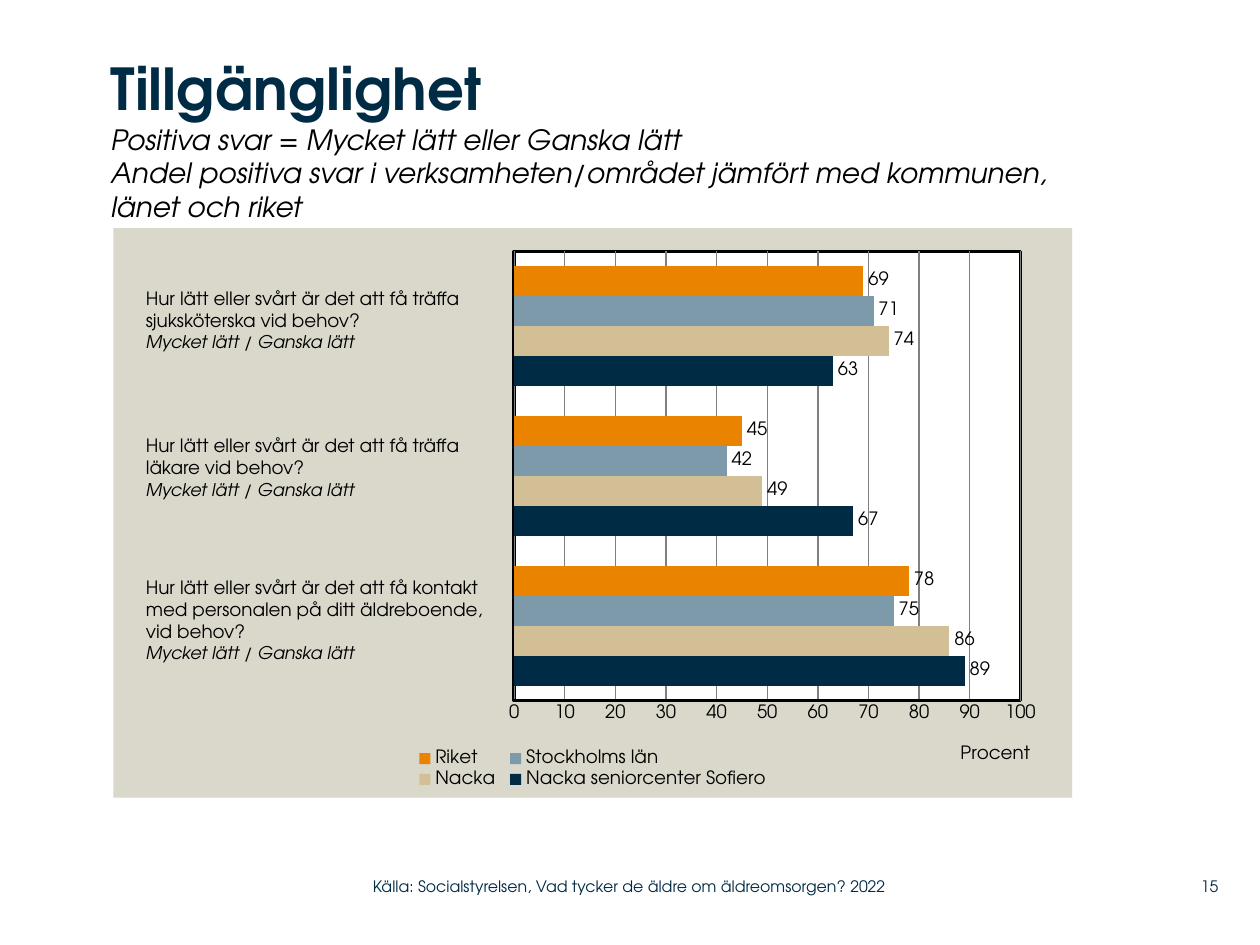
import pptx
import pptx.util
import pptx.chart.data
import pptx.dml.color
import pptx.enum.chart
import pptx.enum.text
import pptx.oxml
import pptx.oxml.ns

Inches, Pt = pptx.util.Inches, pptx.util.Pt
ANCHOR, ALIGN = pptx.enum.text.MSO_ANCHOR, pptx.enum.text.PP_ALIGN

# Content
HEADING = "Tillgänglighet"
SUBHEADING = [
    "Positiva svar = Mycket lätt eller Ganska lätt",
    "Andel positiva svar i verksamheten/området jämfört med kommunen, länet och riket",
]
ANSWER = "Mycket lätt / Ganska lätt"
QUESTIONS = [  # top, width, height, lines
    (2.23, 2.99, 0.81, ["Hur lätt eller svårt är det att få träffa sjuksköterska vid behov?"]),
    (3.4, 2.93, 0.81, ["Hur lätt eller svårt är det att få träffa", "läkare vid behov?"]),
    (4.52, 3.01, 0.98, ["Hur lätt eller svårt är det att få kontakt",
                        "med personalen på ditt äldreboende,", "vid behov?"]),
]
CATEGORIES = ["1", "2", "3"]
SERIES = [  # name, values, colour
    ("Nacka seniorcenter Sofiero", (89, 67, 63), "navy"),
    ("Nacka", (86, 49, 74), "sand"),
    ("Stockholms län", (75, 42, 71), "steel"),
    ("Riket", (78, 45, 69), "orange"),
]
AXIS_TITLE = "Procent"
FOOTERS = [  # left, width, text, alignment
    (2.96, 4.43, "Källa: Socialstyrelsen, Vad tycker de äldre om äldreomsorgen? 2022", ALIGN.LEFT),
    (9.2, 0.47, "15", ALIGN.RIGHT),
]

THEME = {
    "font": "TeX Gyre Adventor",
    "colors": {"navy": "002B45", "sand": "D3BF96", "steel": "7D9AAA", "orange": "E98300",
               "black": "000000", "white": "FFFFFF", "panel": "DAD7CB", "grid": "808080"},
    "sizes": {"heading": 33, "subheading": 16, "chart": 10.5, "answer": 10, "footer": 9},
}


def rgb(color):
    return pptx.dml.color.RGBColor.from_string(THEME["colors"][color])


def style(font, size, color="black", bold=False, italic=False):
    formats = {"name": THEME["font"], "size": Pt(THEME["sizes"][size]),
               "bold": bold, "italic": italic}
    for key, value in formats.items():
        setattr(font, key, value)
    font.color.rgb = rgb(color)


def add_run(paragraph, text, *args, **kwargs):
    run = paragraph.add_run()
    run.text = text
    style(run.font, *args, **kwargs)


def set_frame(frame, margin=None, anchor=ANCHOR.TOP):
    frame.word_wrap = True
    frame.vertical_anchor = anchor
    if margin is not None:
        for side in ("left", "right", "top", "bottom"):
            setattr(frame, f"margin_{side}", Inches(margin))


def paint(element, fill):
    """Give a chart part (chart space or plot area) a solid fill and return its properties."""
    properties = pptx.oxml.parse_xml(
        f'<c:spPr {pptx.oxml.ns.nsdecls("c", "a")}><a:solidFill><a:srgbClr val="{THEME["colors"][fill]}"/>'
        '</a:solidFill><a:ln><a:noFill/></a:ln></c:spPr>')
    return properties


def layout_xml(x, y, w=None, h=None, inner=False):
    target = '<c:layoutTarget val="inner"/>' if inner else ""
    size = f'<c:w val="{w}"/><c:h val="{h}"/>' if w else ""
    return pptx.oxml.parse_xml(
        f'<c:layout {pptx.oxml.ns.nsdecls("c")}><c:manualLayout>{target}<c:xMode val="edge"/>'
        f'<c:yMode val="edge"/><c:x val="{x}"/><c:y val="{y}"/>{size}</c:manualLayout></c:layout>')


def set_layout(element, after, *args, **kwargs):
    """Place a chart part by hand; the layout follows the named child, or comes first."""
    for old in element.findall(pptx.oxml.ns.qn("c:layout")):
        element.remove(old)
    layout = layout_xml(*args, **kwargs)
    if after:
        element.find(pptx.oxml.ns.qn(after)).addnext(layout)
    else:
        element.insert(0, layout)


def add_heading(slide):
    title = slide.shapes.title
    title.left, title.top, title.width, title.height = map(Inches, (0.88, 0.42, 7.77, 1.39))
    set_frame(title.text_frame, margin=0)
    title.text_frame.auto_size = pptx.enum.text.MSO_AUTO_SIZE.NONE
    paragraph = title.text_frame.paragraphs[0]
    paragraph.alignment = ALIGN.LEFT
    add_run(paragraph, HEADING, "heading", "navy", bold=True)
    for line in SUBHEADING:
        paragraph.add_line_break()
        add_run(paragraph, line, "subheading", italic=True)


def add_results(slide):
    data = pptx.chart.data.CategoryChartData()
    data.categories = CATEGORIES
    for name, values, _ in SERIES:
        data.add_series(name, values)
    chart = slide.shapes.add_chart(
        pptx.enum.chart.XL_CHART_TYPE.BAR_CLUSTERED,
        *map(Inches, (0.9, 1.81, 7.61, 4.52)), data).chart
    style(chart.font, "chart")
    chart.has_title = False

    # Bars and value labels
    plot = chart.plots[0]
    plot.gap_width, plot.overlap, plot.vary_by_categories = 100, 0, False
    for series, (_, _, color) in zip(plot.series, SERIES):
        series.format.fill.solid()
        series.format.fill.fore_color.rgb = rgb(color)
        labels = series.data_labels
        labels.show_value = True
        labels.position = pptx.enum.chart.XL_LABEL_POSITION.OUTSIDE_END
        style(labels.font, "chart")

    # Axes
    chart.category_axis.visible = False
    axis = chart.value_axis
    formats = {"minimum_scale": 0, "maximum_scale": 100, "major_unit": 10,
               "has_major_gridlines": True,
               "major_tick_mark": pptx.enum.chart.XL_TICK_MARK.NONE}
    for key, value in formats.items():
        setattr(axis, key, value)
    for line, color, width in ((axis.format.line, "black", 2),
                               (axis.major_gridlines.format.line, "grid", 0.75)):
        line.color.rgb = rgb(color)
        line.width = Pt(width)
    axis.axis_title.text_frame.text = AXIS_TITLE
    style(axis.axis_title.text_frame.paragraphs[0].runs[0].font, "chart")
    set_layout(axis.axis_title._element, "c:tx", 0.88, 0.9)

    # Legend
    chart.has_legend = True
    chart.legend.position = pptx.enum.chart.XL_LEGEND_POSITION.BOTTOM
    chart.legend.include_in_layout = False
    style(chart.legend.font, "chart")
    set_layout(chart.legend._element, "c:legendPos", 0.31, 0.91, 0.38, 0.08)

    # Plot area with a black frame, on a grey panel
    space = chart._chartSpace
    area = space.chart.plotArea
    set_layout(area, None, 0.418, 0.041, 0.528, 0.789, inner=True)
    frame = paint(area, "white")
    frame.replace(frame[1], pptx.oxml.parse_xml(
        f'<a:ln {pptx.oxml.ns.nsdecls("a")} w="{Pt(2)}"><a:solidFill>'
        f'<a:srgbClr val="{THEME["colors"]["black"]}"/></a:solidFill></a:ln>'))
    area.append(frame)
    space.chart.addnext(paint(space, "panel"))


def add_questions(slide):
    for top, width, height, lines in QUESTIONS:
        frame = slide.shapes.add_textbox(*map(Inches, (1.06, top, width, height))).text_frame
        set_frame(frame)
        for i, line in enumerate(lines):
            paragraph = frame.add_paragraph() if i else frame.paragraphs[0]
            add_run(paragraph, line, "chart")
        add_run(frame.add_paragraph(), ANSWER, "answer", italic=True)


def add_footers(slide):
    for left, width, text, alignment in FOOTERS:
        frame = slide.shapes.add_textbox(*map(Inches, (left, 6.89, width, 0.29))).text_frame
        set_frame(frame, margin=0, anchor=ANCHOR.MIDDLE)
        frame.paragraphs[0].alignment = alignment
        add_run(frame.paragraphs[0], text, "footer", "navy")


def main():
    deck = pptx.Presentation()
    deck.slide_width, deck.slide_height = Inches(10), Inches(7.5)
    slide = deck.slides.add_slide(deck.slide_layouts[5])
    for add_part in (add_heading, add_results, add_questions, add_footers):
        add_part(slide)
    deck.save("out.pptx")


if __name__ == "__main__":
    main()
